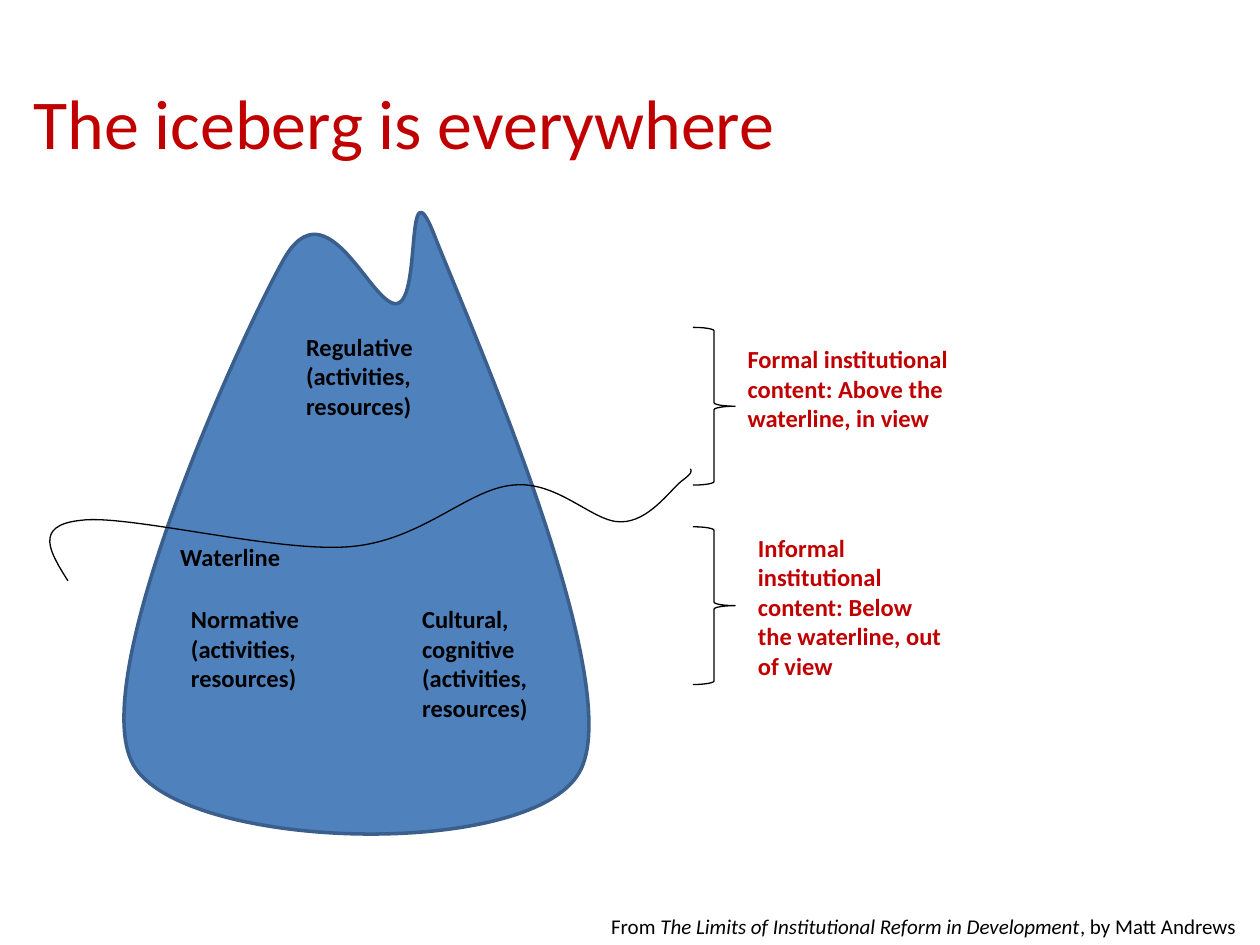
from dataclasses import dataclass

from pptx import Presentation
from pptx.dml.color import RGBColor
from pptx.enum.shapes import MSO_SHAPE
from pptx.enum.text import MSO_ANCHOR, MSO_AUTO_SIZE, PP_ALIGN
from pptx.oxml.ns import qn
from pptx.oxml.xmlchemy import OxmlElement
from pptx.util import Cm, Pt

BRACE = MSO_SHAPE.RIGHT_BRACE
TOP = MSO_ANCHOR.TOP
LEFT = PP_ALIGN.LEFT
GROW = MSO_AUTO_SIZE.SHAPE_TO_FIT_TEXT

RED = RGBColor(0xC0, 0x00, 0x00)
BLACK = RGBColor(0x00, 0x00, 0x00)
BLUE = RGBColor(0x4F, 0x81, 0xBD)
NAVY = RGBColor(0x3A, 0x5F, 0x8C)
FONT = "Calibri"

Point = tuple[float, float]


@dataclass
class Label:
    text: str
    x: float
    y: float
    w: float
    h: float
    color: RGBColor = BLACK


LABELS = [
    Label("Regulative (activities, resources)", 5.92, 6.57, 3.18, 2.06),
    Label("Waterline", 3.38, 10.8, 3.38, 0.86),
    Label("Normative (activities, resources)", 3.6, 12.06, 2.75, 2.06),
    Label("Cultural, cognitive (activities, resources)", 8.26, 12.06, 2.75, 2.65),
    Label("Formal institutional content: Above the waterline, in view",
          14.82, 6.82, 5.5, 2.06, RED),
    Label("Informal institutional content: Below the waterline, out of view",
          15.03, 10.62, 4.23, 3.24, RED),
]
BRACES = [6.6, 10.62]  # tops

# Bezier chains in cm: a start point, then two handles and an end per curve
ICEBERG = [
    (2.69, 15.42),
    (1.7, 13.69), (4.85, 6.78), (5.72, 5.23),
    (6.6, 3.68), (7.49, 6.2), (8, 6.12),
    (8.51, 6.05), (8.15, 3.18), (8.76, 4.75),
    (9.37, 6.32), (12.7, 13.79), (11.68, 15.57),
    (10.67, 17.35), (3.68, 17.15), (2.69, 15.42),
]
WATER = [
    (1.37, 11.71),
    (1.02, 11.15), (0.66, 10.59), (1.63, 10.49),
    (2.57, 10.36), (5.59, 11.15), (7.06, 11.02),
    (8.51, 10.9), (9.42, 9.86), (10.34, 9.78),
    (11.25, 9.68), (11.96, 10.54), (12.52, 10.52),
    (13.08, 10.52), (13.51, 9.88), (13.74, 9.7),
    (13.97, 9.53), (13.94, 9.5), (13.92, 9.45),
]


def set_line(shape, color: RGBColor, width: float) -> None:
    shape.shadow.inherit = False
    shape.line.color.rgb = color
    shape.line.width = Pt(width)


def add_curve(shapes, chain: list[Point], close: bool):
    """Add a freeform and join every three of its lines into one curve."""
    dots = [(Cm(x), Cm(y)) for x, y in chain]
    pen = shapes.build_freeform(*dots[0])
    pen.add_line_segments(dots[1:], close=close)
    shape = pen.convert_to_shape()
    lines = list(shape.element.iter(qn("a:lnTo")))
    for i in range(0, len(chain) - 1, 3):
        curve = OxmlElement("a:cubicBezTo")
        lines[i].addprevious(curve)
        for line in lines[i:i + 3]:
            curve.append(line[0])
            line.getparent().remove(line)
    return shape


def set_font(par, size: float, color: RGBColor, bold: bool = False) -> None:
    par.font.name = FONT
    par.font.size = Pt(size)
    par.font.bold = bold
    par.font.color.rgb = color


def add_box(shapes, x: float, y: float, w: float, h: float):
    """Add a wrapping text box and return its first paragraph."""
    frame = shapes.add_textbox(Cm(x), Cm(y), Cm(w), Cm(h)).text_frame
    frame.word_wrap = True
    frame.auto_size = GROW
    return frame.paragraphs[0]


def add_label(shapes, label: Label) -> None:
    par = add_box(shapes, label.x, label.y, label.w, label.h)
    par.text = label.text
    set_font(par, 14, label.color, bold=True)


def add_brace(shapes, y: float) -> None:
    brace = shapes.add_shape(BRACE, Cm(13.97), Cm(y), Cm(0.85), Cm(3.18))
    brace.fill.background()
    set_line(brace, BLACK, 0.75)


def main() -> None:
    deck = Presentation()
    deck.slide_width, deck.slide_height = Cm(25.4), Cm(19.05)
    slide = deck.slides.add_slide(deck.slide_layouts[5])
    shapes = slide.shapes

    # Title
    title = shapes.title
    title.left, title.top = Cm(0.42), Cm(1.48)
    title.width, title.height = Cm(17.15), Cm(1.97)
    frame = title.text_frame
    frame.text = "The iceberg is everywhere"
    frame.vertical_anchor = TOP
    frame.auto_size = GROW
    frame.paragraphs[0].alignment = LEFT
    set_font(frame.paragraphs[0], 40, RED)

    # Iceberg
    berg = add_curve(shapes, ICEBERG, close=True)
    berg.fill.solid()
    berg.fill.fore_color.rgb = BLUE
    set_line(berg, NAVY, 2)

    # Braces and labels
    for y in BRACES:
        add_brace(shapes, y)
    for label in LABELS:
        add_label(shapes, label)

    # Waterline
    water = add_curve(shapes, WATER, close=False)
    water.fill.background()
    set_line(water, BLACK, 0.75)

    # Source
    par = add_box(shapes, 12.07, 18.3, 13.33, 0.77)
    set_font(par, 12, BLACK)
    par.add_run().text = "From "
    book = par.add_run()
    book.text = "The Limits of Institutional Reform in Development"
    book.font.italic = True
    par.add_run().text = ", by Matt Andrews"

    deck.save("out.pptx")


if __name__ == "__main__":
    main()
